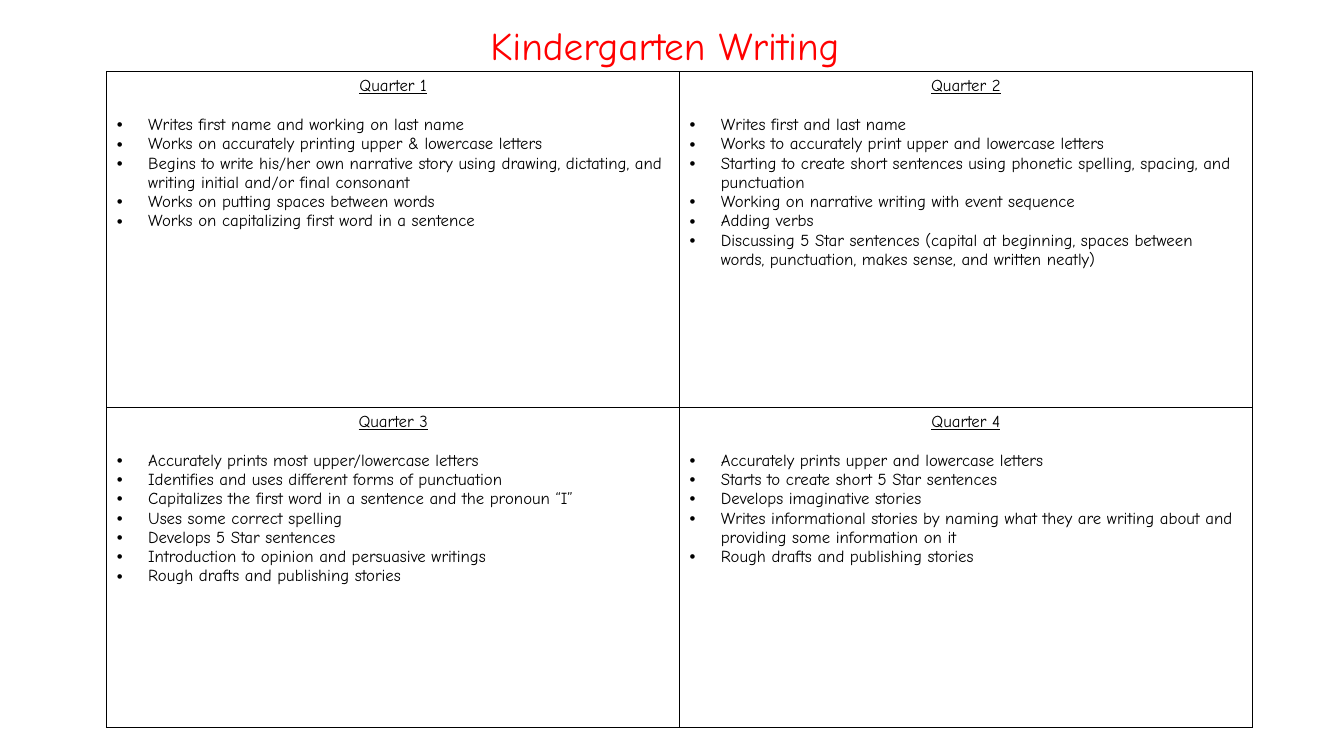
import lxml.etree
import pptx
import pptx.dml.color
import pptx.enum.text
import pptx.oxml
import pptx.oxml.ns
import pptx.util

RED = pptx.dml.color.RGBColor(0xFF, 0x00, 0x00)
BLACK = pptx.dml.color.RGBColor(0x00, 0x00, 0x00)
CENTER = pptx.enum.text.PP_ALIGN.CENTER

QUARTERS = [
    [
        "Writes first name and working on last name",
        "Works on accurately printing upper & lowercase letters",
        "Begins to write his/her own narrative story using drawing, dictating, and "
        "writing initial and/or final consonant",
        "Works on putting spaces between words",
        "Works on capitalizing first word in a sentence",
    ],
    [
        "Writes first and last name",
        "Works to accurately print upper and lowercase letters",
        "Starting to create short sentences using phonetic spelling, spacing, and punctuation",
        "Working on narrative writing with event sequence",
        "Adding verbs",
        "Discussing 5 Star sentences (capital at beginning, spaces between words, "
        "punctuation, makes sense, and written neatly)",
    ],
    [
        "Accurately prints most upper/lowercase letters",
        "Identifies and uses different forms of punctuation",
        "Capitalizes the first word in a sentence and the pronoun “I”",
        "Uses some correct spelling",
        "Develops 5 Star sentences",
        "Introduction to opinion and persuasive writings",
        "Rough drafts and publishing stories",
    ],
    [
        "Accurately prints upper and lowercase letters",
        "Starts to create short 5 Star sentences",
        "Develops imaginative stories",
        "Writes informational stories by naming what they are writing about and "
        "providing some information on it",
        "Rough drafts and publishing stories",
    ],
]


class CurriculumSlide:
    """Adds styled elements to one slide, with lengths as shares of its size."""

    font_name = "Comic Neue"
    body_size = 12
    indent = pptx.util.Inches(0.31)
    heading_gap = pptx.util.Pt(13.8)

    def __init__(self, presentation):
        self.width = presentation.slide_width
        self.height = presentation.slide_height
        self.slide = presentation.slides.add_slide(presentation.slide_layouts[5])

    def box(self, left, top, width, height):
        return (int(left * self.width), int(top * self.height),
                int(width * self.width), int(height * self.height))

    def style(self, paragraph, size, color):
        paragraph.font.name = self.font_name
        paragraph.font.size = pptx.util.Pt(size)
        paragraph.font.color.rgb = color

    def title(self, text, *shares):
        title = self.slide.shapes.title
        title.left, title.top, title.width, title.height = self.box(*shares)
        frame = title.text_frame
        frame.text = text
        frame.auto_size = pptx.enum.text.MSO_AUTO_SIZE.NONE
        frame.vertical_anchor = pptx.enum.text.MSO_ANCHOR.MIDDLE
        paragraph = frame.paragraphs[0]
        paragraph.alignment = CENTER
        paragraph.line_spacing = 0.9
        self.style(paragraph, 28, RED)

    def table(self, quarters, columns, row_shares, *shares):
        table = self.slide.shapes.add_table(
            len(row_shares), columns, *self.box(*shares)).table
        table.first_row = table.horz_banding = False
        for row, share in zip(table.rows, row_shares):
            row.height = int(share * self.height)
        for index, goals in enumerate(quarters):
            cell = table.cell(*divmod(index, columns))
            cell.fill.background()
            self.borders(cell)
            self.heading(cell.text_frame.paragraphs[0], f"Quarter {index + 1}")
            for goal in goals:
                self.bullet(cell.text_frame.add_paragraph(), goal)

    def heading(self, paragraph, text):
        paragraph.text = text
        paragraph.alignment = CENTER
        paragraph.space_after = self.heading_gap
        self.style(paragraph, self.body_size, BLACK)
        paragraph.font.underline = True

    def bullet(self, paragraph, text):
        paragraph.text = text
        self.style(paragraph, self.body_size, BLACK)
        properties = paragraph._p.get_or_add_pPr()
        properties.set("marL", str(self.indent))
        properties.set("indent", str(-self.indent))
        namespace = pptx.oxml.ns.nsdecls("a")
        marks = [f'<a:buFont {namespace} typeface="Arial"/>',
                 f'<a:buChar {namespace} char="•"/>']
        default_font = properties.find(pptx.oxml.ns.qn("a:defRPr"))
        for mark in marks:
            default_font.addprevious(pptx.oxml.parse_xml(mark))

    def borders(self, cell):
        properties = cell._tc.get_or_add_tcPr()
        for position, side in enumerate(("lnL", "lnR", "lnT", "lnB")):
            line = lxml.etree.Element(pptx.oxml.ns.qn(f"a:{side}"), w=str(pptx.util.Pt(1)))
            fill = lxml.etree.SubElement(line, pptx.oxml.ns.qn("a:solidFill"))
            lxml.etree.SubElement(fill, pptx.oxml.ns.qn("a:srgbClr"), val=str(BLACK))
            properties.insert(position, line)


def main():
    presentation = pptx.Presentation()
    presentation.slide_width = pptx.util.Inches(13.33)
    presentation.slide_height = pptx.util.Inches(7.5)
    page = CurriculumSlide(presentation)
    page.title("Kindergarten Writing ", 0.9 / 13.33, -0.12 / 7.5, 11.52 / 13.33, 1.19 / 7.5)
    page.table(QUARTERS, 2, (3.33 / 7.5, 3.18 / 7.5),
               1.06 / 13.33, 0.71 / 7.5, 11.36 / 13.33, 6.51 / 7.5)
    presentation.save("out.pptx")


if __name__ == "__main__":
    main()
